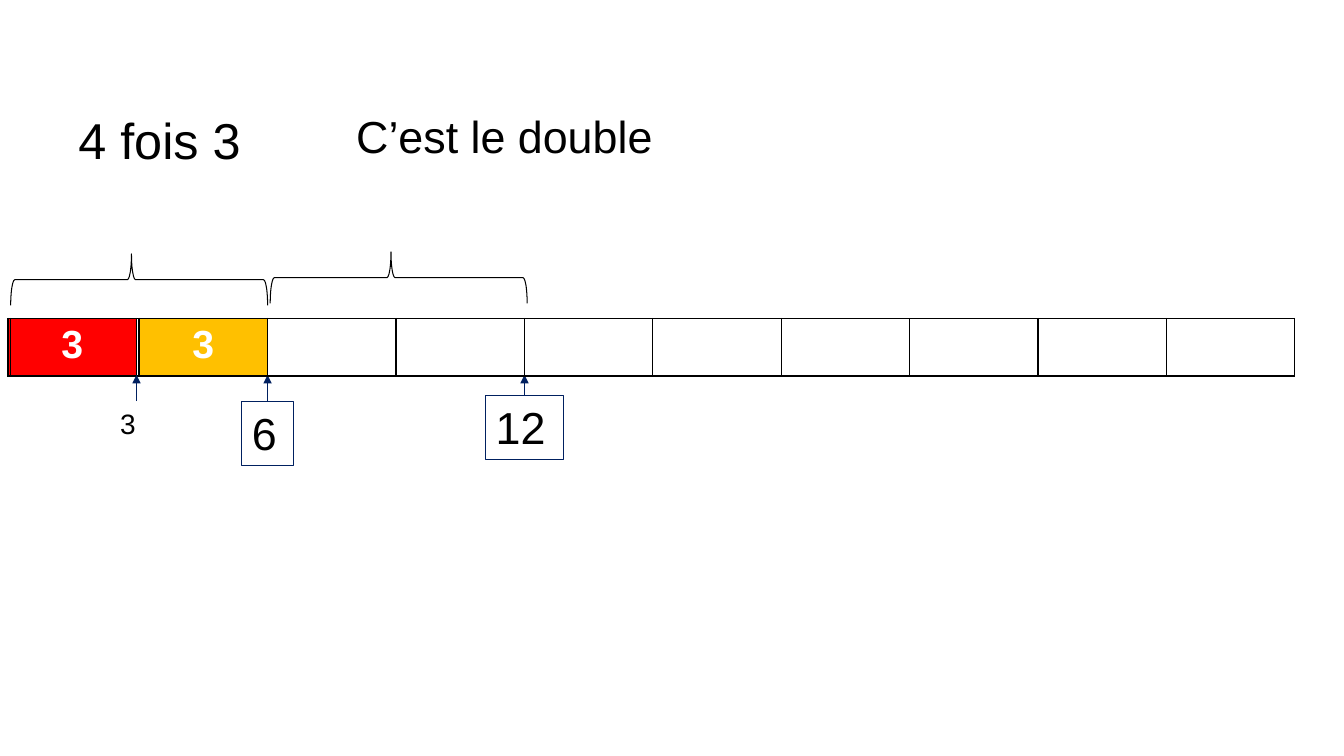
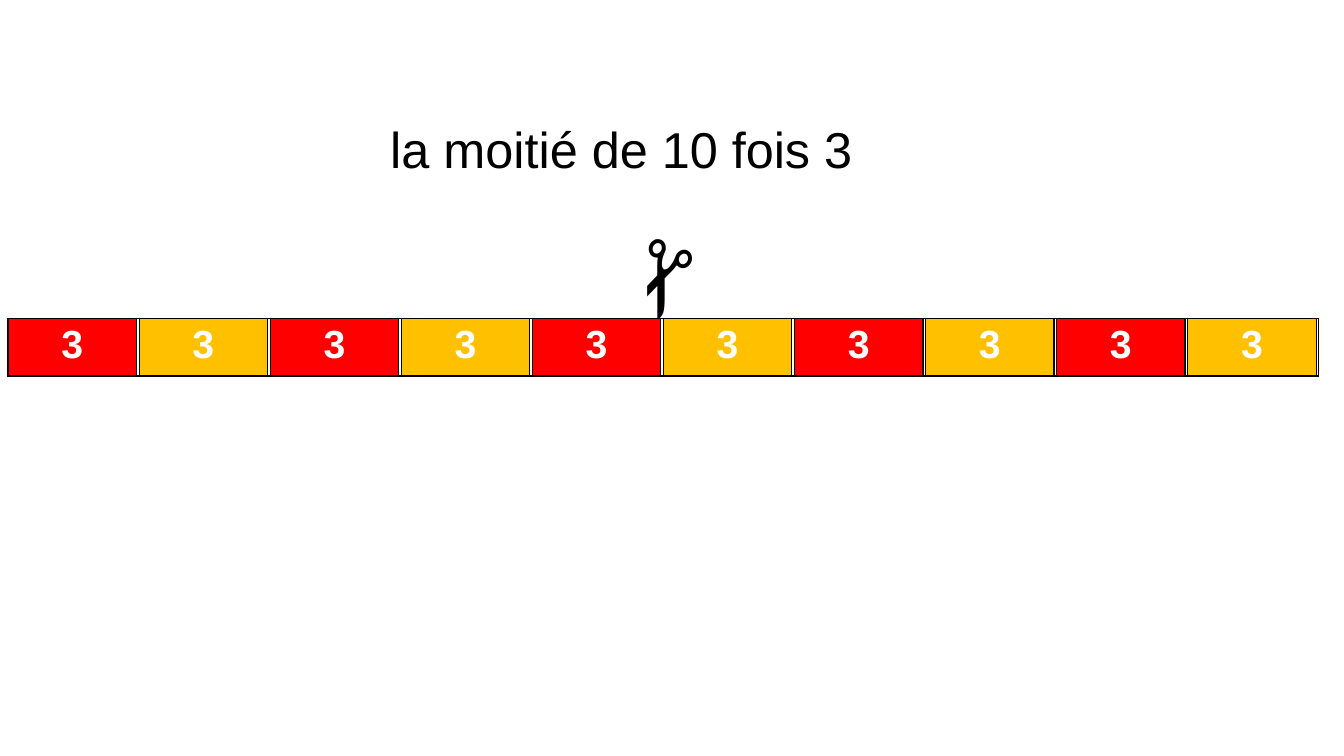
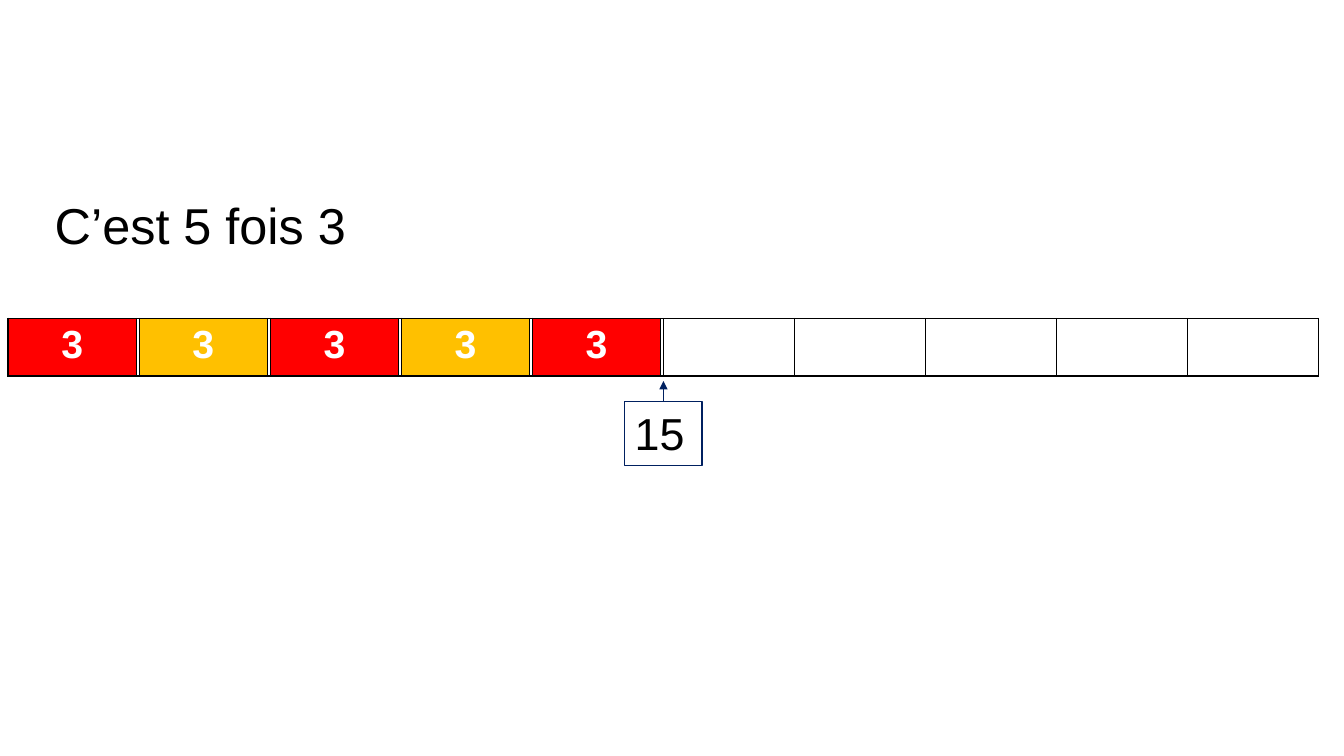
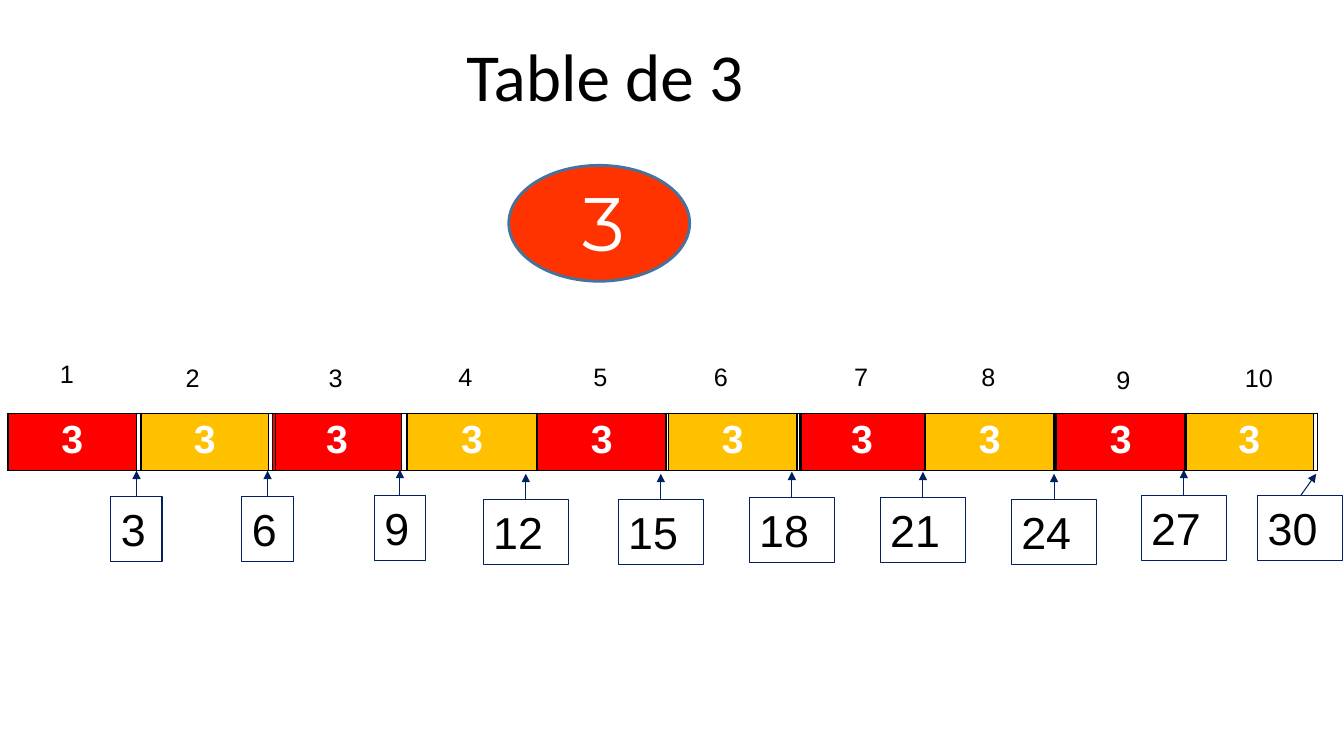
import dataclasses

import pptx
import pptx.dml.color
import pptx.enum.shapes
import pptx.enum.text
import pptx.oxml
import pptx.oxml.ns
import pptx.util

SHAPES = pptx.enum.shapes.MSO_SHAPE
ALIGN = pptx.enum.text.PP_ALIGN


@dataclasses.dataclass(frozen=True)
class Theme:
    """Colours, fonts, type sizes and grid, in inches and points."""

    width: float = 13.33
    height: float = 7.5
    margin: float = 0.08
    column: float = 1.3
    row: float = 0.5
    ink: str = "000000"
    paper: str = "FFFFFF"
    marker: str = "002060"
    tiles: tuple = ("FF0000", "FFC000")
    badge: str = "FF3300"
    badge_edge: str = "43739E"
    body_font: str = "Arial"
    title_font: str = "Calibri"
    badge_font: str = "Montserrat"
    count: int = 18
    note: int = 20
    tile: int = 28
    result: int = 32
    heading: int = 36
    title: int = 48
    emblem: int = 54
    icon: int = 72
    thin: float = 0.75
    border: float = 1
    edge: float = 2


class Lesson:
    """Draws the elements of a times-table lesson on the current slide."""

    strip_height = 1.14
    tile_width = 0.98

    def __init__(self, theme):
        """Open an empty deck in the given theme."""
        self.theme = theme
        self.deck = pptx.Presentation()
        self.deck.slide_width = pptx.util.Inches(theme.width)
        self.deck.slide_height = pptx.util.Inches(theme.height)
        self.shapes = None

    def new_slide(self):
        """Start a blank slide."""
        self.shapes = self.deck.slides.add_slide(self.deck.slide_layouts[6]).shapes

    def x(self, columns):
        """Turn a column position into a length from the left edge."""
        return pptx.util.Inches(self.theme.margin) + self.wide(columns)

    def wide(self, columns):
        """Turn a number of columns into a length."""
        return pptx.util.Inches(columns * self.theme.column)

    def tall(self, rows):
        """Turn a number of rows into a length."""
        return pptx.util.Inches(rows * self.theme.row)

    def frame(self, left, top, width, height):
        """Turn a grid box into slide lengths."""
        return self.x(left), self.tall(top), self.wide(width), self.tall(height)

    def color(self, code):
        """Turn a hex code into a colour."""
        return pptx.dml.color.RGBColor.from_string(code)

    def set_words(self, frame, words, size, color=None, font=None, bold=False,
                  align=ALIGN.LEFT):
        """Put one styled paragraph in a text frame."""
        frame.text = words
        paragraph = frame.paragraphs[0]
        paragraph.alignment = align
        style = paragraph.runs[0].font
        style.size = pptx.util.Pt(size)
        style.name = font or self.theme.body_font
        style.bold = bold
        style.color.rgb = self.color(color or self.theme.ink)

    def text(self, box, words, size, rotation=0, **style):
        """Add a text box."""
        label = self.shapes.add_textbox(*self.frame(*box))
        label.rotation = rotation
        label.text_frame.word_wrap = True
        label.text_frame.auto_size = pptx.enum.text.MSO_AUTO_SIZE.SHAPE_TO_FIT_TEXT
        self.set_words(label.text_frame, words, size, **style)

    def outline(self, kind, frame, line, weight, fill=None):
        """Add a preset shape with an outline and an optional fill."""
        shape = self.shapes.add_shape(kind, *frame)
        shape.shadow.inherit = False
        shape.line.color.rgb = self.color(line)
        shape.line.width = pptx.util.Pt(weight)
        if fill:
            shape.fill.solid()
            shape.fill.fore_color.rgb = self.color(fill)
        else:
            shape.fill.background()
        return shape

    def arrow(self, start, end):
        """Add an arrow between two grid points."""
        pointer = self.shapes.add_connector(
            pptx.enum.shapes.MSO_CONNECTOR.STRAIGHT,
            self.x(start[0]), self.tall(start[1]), self.x(end[0]), self.tall(end[1]))
        pointer.line.color.rgb = self.color(self.theme.marker)
        pointer.line.width = pptx.util.Pt(self.theme.thin)
        properties = pointer._element.spPr
        properties.get_or_add_ln().append(pptx.oxml.parse_xml(
            f'<a:tailEnd {pptx.oxml.ns.nsdecls("a")} type="triangle"/>'))
        properties.append(
            pptx.oxml.parse_xml(f'<a:effectLst {pptx.oxml.ns.nsdecls("a")}/>'))

    def result(self, value, center, top, width, gap=0.52, lean=0):
        """Add a boxed result with an arrow up to the strip."""
        box = self.outline(
            SHAPES.RECTANGLE, self.frame(center - width / 2, top, width, 1.28),
            self.theme.marker, self.theme.thin)
        box.text_frame.word_wrap = True
        box.text_frame.vertical_anchor = pptx.enum.text.MSO_ANCHOR.TOP
        self.set_words(box.text_frame, str(value), self.theme.result)
        self.arrow((center, top), (center + lean, top - gap))

    def brace(self, left, top, width, height):
        """Add a brace that opens downwards over the given box."""
        x, y, across, depth = self.frame(left, top, width, height)
        upright = (x + (across - depth) // 2, y + (depth - across) // 2, depth, across)
        brace = self.outline(SHAPES.LEFT_BRACE, upright, self.theme.ink, self.theme.thin)
        brace.rotation = 90
        brace.adjustments[0] = 0.08
        brace.adjustments[1] = 0.53

    def strip(self, left, top, widths):
        """Add a one-row table of clear bordered cells."""
        table = self.shapes.add_table(
            1, len(widths), *self.frame(left, top, sum(widths), self.strip_height)).table
        table.first_row = table.horz_banding = False
        for column, width in zip(table.columns, widths):
            column.width = self.wide(width)
        weight = pptx.util.Pt(self.theme.border)
        for cell in table.iter_cells():
            properties = cell._tc.get_or_add_tcPr()
            for side in ("lnL", "lnR", "lnT", "lnB"):
                properties.append(pptx.oxml.parse_xml(
                    f'<a:{side} {pptx.oxml.ns.nsdecls("a")} w="{weight}"><a:solidFill>'
                    f'<a:srgbClr val="{self.theme.ink}"/></a:solidFill></a:{side}>'))
            cell.fill.background()
        return table

    def tiles(self, top, lefts, narrow=None):
        """Add coloured tiles of three, in alternating colours."""
        for index, left in enumerate(lefts):
            width = 0.95 if index == narrow else self.tile_width
            cell = self.strip(left, top, [width]).cell(0, 0)
            cell.fill.solid()
            cell.fill.fore_color.rgb = self.color(self.theme.tiles[index % 2])
            self.set_words(cell.text_frame, "3", self.theme.tile, self.theme.paper,
                           bold=True, align=ALIGN.CENTER)

    def badge(self):
        """Add the oval that shows the number of the table."""
        self.outline(SHAPES.OVAL, self.frame(3.82, 3.28, 1.38, 2.3),
                     self.theme.badge_edge, self.theme.edge, self.theme.badge)
        self.text((4.07, 3.4, 0.95, 2.02), "3", self.theme.emblem,
                  color=self.theme.paper, font=self.theme.badge_font, align=ALIGN.CENTER)


STRIP_TOP = 6.32
TABLE_TOP = 8.2
ONE_DIGIT = 0.39
TWO_DIGITS = 0.59
WIDE_DIGITS = 0.65


def double_slide(lesson):
    """Four times three as a double."""
    lesson.new_slide()
    lesson.tiles(STRIP_TOP, range(2))
    lesson.text((0.46, 2.06, 1.52, 1.42), "4 fois 3", lesson.theme.heading)
    lesson.text((2.58, 2.06, 2.48, 1.28), "C’est le double", lesson.theme.result)
    lesson.result(12, 3.94, 7.84, TWO_DIGITS, gap=0.4)
    lesson.result(6, 1.98, 7.96, ONE_DIGIT)
    lesson.strip(0.02, STRIP_TOP, [0.98] * 10)
    lesson.text((0.78, 7.96, 0.39, 0.88), "3", lesson.theme.note)
    lesson.arrow((0.98, 7.96), (0.98, 7.44))
    lesson.brace(0.02, 5.04, 1.96, 1.02)
    lesson.brace(2, 5, 1.96, 1.02)


def half_slide(lesson):
    """Ten times three, cut in half."""
    lesson.new_slide()
    lesson.tiles(STRIP_TOP, range(10))
    lesson.text((2.84, 2.24, 3.76, 1.42), "la moitié de 10 fois 3", lesson.theme.heading)
    lesson.text((4.59, 4.4, 0.9, 2.62), "✁", lesson.theme.icon, rotation=90)
    lesson.strip(0, STRIP_TOP, [1] * 10)


def five_slide(lesson):
    """Five times three."""
    lesson.new_slide()
    lesson.tiles(STRIP_TOP, range(5))
    lesson.result(15, 5, 7.96, TWO_DIGITS, gap=0.4)
    lesson.text((0.28, 3.76, 3.81, 1.42), "C’est 5 fois 3", lesson.theme.heading)
    lesson.strip(0, STRIP_TOP, [1] * 10)


def table_slide(lesson):
    """The whole table of three."""
    lesson.new_slide()
    lesson.tiles(TABLE_TOP, [0, 1.01, 2.02, 3.05, 4.04, 5.04, 6.04, 7, 8, 8.98], narrow=6)
    result_centers = [0.98, 1.98, 2.99, 3.95, 4.98, 5.98, 6.98, 7.98, 8.97, 9.86]
    result_tops = [9.86, 9.86, 9.84, 9.92, 9.92, 9.88, 9.88, 9.92, 9.84, 9.84]
    for factor, (center, top) in enumerate(zip(result_centers, result_tops), 1):
        last = factor == 10
        lesson.result(3 * factor, center, top, ONE_DIGIT if factor < 4 else WIDE_DIGITS,
                      gap=0.44 if last else 0.52, lean=0.12 if last else 0)
    lesson.text((3.42, 0.58, 2.52, 1.8), "Table de 3", lesson.theme.title,
                font=lesson.theme.title_font)
    lesson.badge()
    lesson.strip(0, TABLE_TOP, [1.02, 1.02, 1, 1, 1, 1.01, 0.94, 1, 1, 1])
    factor_lefts = [0.32, 1.28, 2.37, 3.36, 4.39, 5.31, 6.38, 7.35, 8.38, 9.36]
    factor_tops = [7.02, 7.1, 7.1, 7.08, 7.08, 7.08, 7.08, 7.08, 7.14, 7.1]
    for factor, (left, top) in enumerate(zip(factor_lefts, factor_tops), 1):
        lesson.text((left, top, 0.27 if factor < 10 else 0.45, 0.8), str(factor),
                    lesson.theme.count)


def main():
    """Build the four slides and save them."""
    lesson = Lesson(Theme())
    for build in (double_slide, half_slide, five_slide, table_slide):
        build(lesson)
    lesson.deck.save("out.pptx")


if __name__ == "__main__":
    main()
